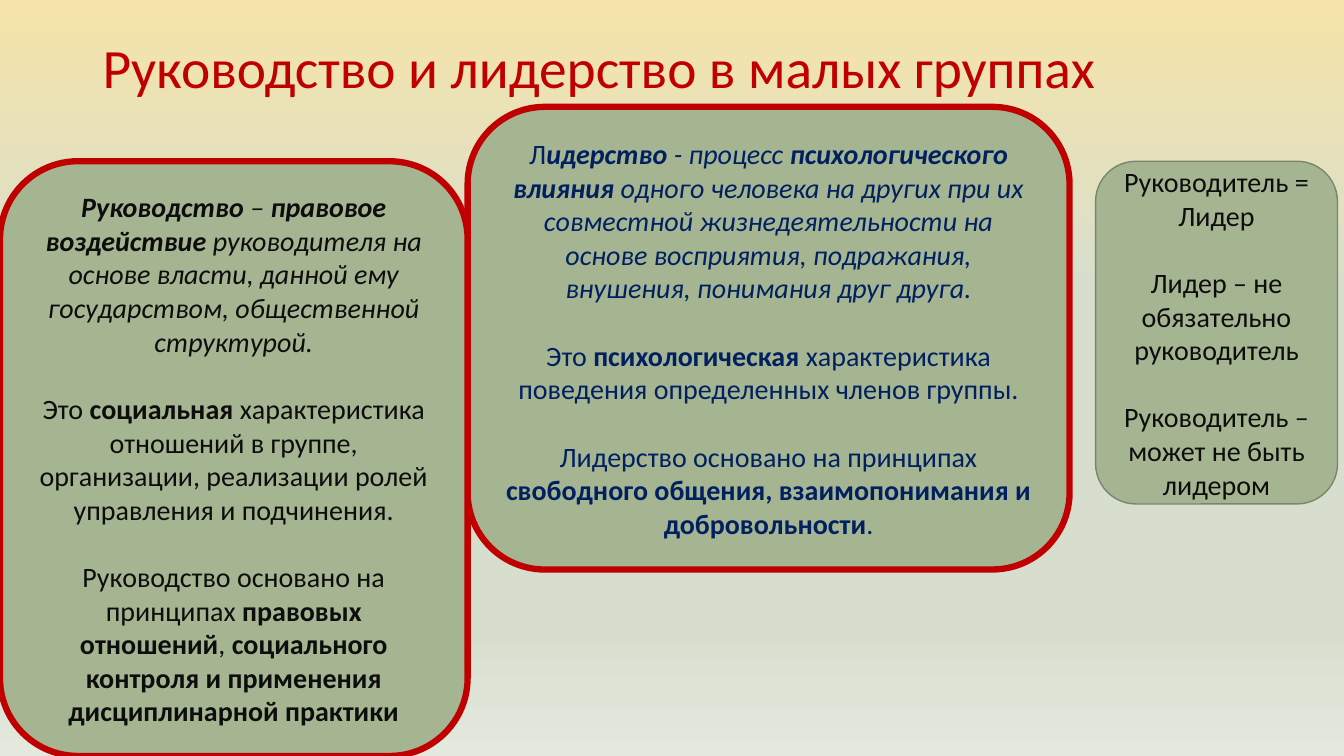
from copy import deepcopy
from dataclasses import dataclass

from pptx import Presentation
from pptx.dml.color import RGBColor
from pptx.enum.shapes import MSO_SHAPE
from pptx.enum.text import MSO_ANCHOR, PP_ALIGN
from pptx.oxml.ns import qn
from pptx.util import Pt


@dataclass(frozen=True)
class Theme:
    font: str = "Calibri"
    head: float = 39.6
    body: float = 20
    gap: float = 24
    red: str = "C00000"
    ink: str = "0D0D0D"
    navy: str = "002060"
    sage: str = "A5B592"
    edge: str = "7A866C"
    sky: tuple = ((0, "F5E4A9"), (40, "D7DECE"), (83, "D7DECE"), (100, "E4E9DE"))


THEME = Theme()

LEAD = [
    [("Руководство ", "bi"), ("– ", "i"), ("правовое воздействие", "bi"),
     (" руководителя на основе власти, данной ему государством, "
      "общественной структурой.", "i")],
    [("Это ", ""), ("социальная", "b"),
     (" характеристика отношений в группе, организации, реализации ролей "
      "управления и подчинения.", "")],
    [("Руководство основано на принципах ", ""), ("правовых отношений", "b"),
     (", ", ""),
     ("социального контроля и применения дисциплинарной практики", "b")],
]

INSPIRE = [
    [("Л", ""), ("идерство ", "bi"), ("- процесс ", "i"),
     ("психологического влияния", "bi"),
     (" одного человека на других при их совместной жизнедеятельности на "
      "основе восприятия, подражания, внушения, понимания друг друга.", "i")],
    [("Это ", ""), ("психологическая", "b"),
     (" характеристика поведения определенных членов группы.", "")],
    [("Лидерство основано на принципах ", ""),
     ("свободного общения, взаимопонимания и добровольности", "b"), (".", "")],
]

COMPARE = [
    [("Руководитель =", "")],
    [("Лидер", "")],
    [("Лидер – не обязательно руководитель", "")],
    [("Руководитель – может не быть лидером", "")],
]


def tint(code):
    return RGBColor.from_string(code)


def style(run, size, color, marks=""):
    font = run.font
    font.name = THEME.font
    font.size = Pt(size)
    font.color.rgb = tint(color)
    font.bold = "b" in marks
    font.italic = "i" in marks


def paint_back(slide):
    fill = slide.background.fill
    fill.gradient()
    fill.gradient_angle = 270
    stops = fill._fill._gradFill.find(qn("a:gsLst"))
    for stop in list(stops)[:2]:
        stops.remove(stop)
        model = stop
    for _ in THEME.sky:
        stops.append(deepcopy(model))
    for stop, (place, color) in zip(fill.gradient_stops, THEME.sky):
        stop.position = place / 100
        stop.color.rgb = tint(color)


def add_title(slide, text, box):
    frame = slide.shapes.add_textbox(*map(Pt, box)).text_frame
    frame.word_wrap = True
    frame.vertical_anchor = MSO_ANCHOR.MIDDLE
    frame.text = text
    line = frame.paragraphs[0]
    line.line_spacing = 0.9
    style(line.runs[0], THEME.head, THEME.red)


def add_card(slide, box, paras, ink, edge, width, tight=()):
    card = slide.shapes.add_shape(MSO_SHAPE.ROUNDED_RECTANGLE, *map(Pt, box))
    card.shadow.inherit = False
    card.fill.solid()
    card.fill.fore_color.rgb = tint(THEME.sage)
    card.line.color.rgb = tint(edge)
    card.line.width = Pt(width)
    frame = card.text_frame
    frame.word_wrap = True
    frame.vertical_anchor = MSO_ANCHOR.MIDDLE
    for index, parts in enumerate(paras):
        para = frame.add_paragraph() if index else frame.paragraphs[0]
        para.alignment = PP_ALIGN.CENTER
        if index and index not in tight:
            para.space_before = Pt(THEME.gap)
        for text, marks in parts:
            run = para.add_run()
            run.text = text
            style(run, THEME.body, ink, marks)


def main():
    deck = Presentation()
    deck.slide_width, deck.slide_height = Pt(960), Pt(540)
    slide = deck.slides.add_slide(deck.slide_layouts[6])
    paint_back(slide)
    add_title(slide, "Руководство и лидерство в малых группах",
              (66.2, 28.8, 828, 43.2))
    add_card(slide, (782.6, 115.2, 172.8, 244.8), COMPARE,
             THEME.ink, THEME.edge, 1, tight=(1,))
    add_card(slide, (334, 76.3, 430, 330.5), INSPIRE,
             THEME.navy, THEME.red, 4.5)
    add_card(slide, (0, 115.2, 334, 424.8), LEAD,
             THEME.ink, THEME.red, 4.5)
    deck.save("out.pptx")


if __name__ == "__main__":
    main()
